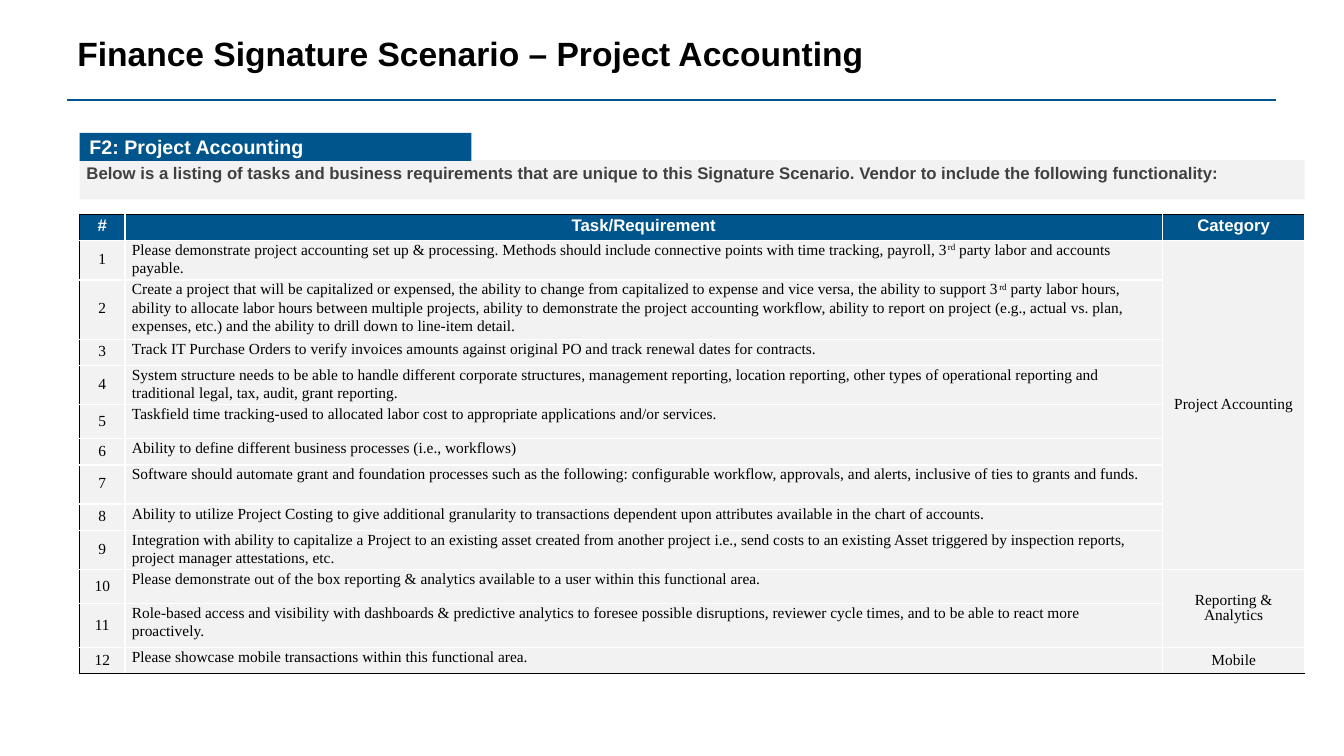
import pptx
import pptx.util
import pptx.dml.color
import pptx.enum.shapes
import pptx.enum.text
import pptx.oxml
import pptx.oxml.ns
from lxml import etree

Pt = pptx.util.Pt
ALIGN = pptx.enum.text.PP_ALIGN
ANCHOR = pptx.enum.text.MSO_ANCHOR
BLUE, GREY, WHITE, BLACK = "00558C", "F2F2F2", "FFFFFF", "000000"

HEADINGS = ["#", "Task/Requirement", "Category"]
COL_WIDTHS = [32.4, 741.6, 101.5]
HEADER_HEIGHT = 18.3
# Row height and requirement; ^ marks the ends of superscript text
REQUIREMENTS = [
    (28, "Please demonstrate project accounting set up & processing. Methods should include connective points "
         "with time tracking, payroll, 3^rd^ party labor and accounts payable."),
    (41.8, "Create a project that will be capitalized or expensed, the ability to change from capitalized to "
           "expense and vice versa, the ability to support 3^rd^ party labor hours, ability to allocate labor "
           "hours between multiple projects, ability to demonstrate the project accounting workflow, ability to "
           "report on project (e.g., actual vs. plan, expenses, etc.) and the ability to drill down to "
           "line-item detail."),
    (18.6, "Track IT Purchase Orders to verify invoices amounts against original PO and track renewal dates "
           "for contracts."),
    (28, "System structure needs to be able to handle different corporate structures, management reporting, "
         "location reporting, other types of operational reporting and traditional legal, tax, audit, "
         "grant reporting."),
    (24.3, "Taskfield time tracking-used to allocated labor cost to appropriate applications and/or services."),
    (18.6, "Ability to define different business processes (i.e., workflows)"),
    (28, "Software should automate grant and foundation processes such as the following: configurable "
         "workflow, approvals, and alerts, inclusive of ties to grants and funds."),
    (18.6, "Ability to utilize Project Costing to give additional granularity to transactions dependent upon "
           "attributes available in the chart of accounts."),
    (28, "Integration with ability to capitalize a Project to an existing asset created from another project "
         "i.e., send costs to an existing Asset triggered by inspection reports, project manager "
         "attestations, etc."),
    (24.3, "Please demonstrate out of the box reporting & analytics available to a user within this "
           "functional area."),
    (31.5, "Role-based access and visibility with dashboards & predictive analytics to foresee possible "
           "disruptions, reviewer cycle times, and to be able to react more proactively."),
    (18.6, "Please showcase mobile transactions within this functional area."),
]
# First row, last row, category
CATEGORIES = [(1, 9, "Project Accounting"), (10, 11, "Reporting & Analytics"), (12, 12, "Mobile")]

HEADER = dict(size=12, name="Arial", color=WHITE, bold=True)
BODY = dict(size=11, name="Times New Roman", color=BLACK, bold=False)
CENTRED = dict(alignment=ALIGN.CENTER, line_spacing=Pt(11))
CENTRED_BODY = dict(CENTRED, space_after=Pt(1.65))
REQUIREMENT = dict(alignment=ALIGN.LEFT, line_spacing=1.07)


def rgb(color):
    return pptx.dml.color.RGBColor.from_string(color)


def write(tf, text, font, layout):
    tf.word_wrap = True
    p = tf.paragraphs[0]
    for key, value in layout.items():
        setattr(p, key, value)
    for i, part in enumerate(text.split("^")):
        r = p.add_run()
        r.text = part
        r.font.size = Pt(font["size"])
        r.font.color.rgb = rgb(font["color"])
        for key in ("name", "bold"):
            setattr(r.font, key, font[key])
        if i % 2:
            r.font._element.set("baseline", "30000")


def add_text(s, box, text, font, **layout):
    tf = s.shapes.add_textbox(*map(Pt, box)).text_frame
    write(tf, text, font, layout)


def add_block(s, box, color):
    sp = s.shapes.add_shape(pptx.enum.shapes.MSO_SHAPE.RECTANGLE, *map(Pt, box))
    sp.shadow.inherit = False
    sp.fill.solid()
    sp.fill.fore_color.rgb = rgb(color)
    sp.line.fill.background()
    return sp


def add_title(s, x, y, w, h):
    """Place the title and the rule just below it."""
    add_text(s, (x, y, w, h), "Finance Signature Scenario – Project Accounting",
             dict(size=24, name="Arial", color=BLACK, bold=True), line_spacing=0.9)
    rule_y = Pt(y + h + 1.4)
    rule = s.shapes.add_connector(pptx.enum.shapes.MSO_CONNECTOR.STRAIGHT,
                                  Pt(x), rule_y, Pt(x + w), rule_y)
    rule.line.color.rgb = rgb(BLUE)
    rule.line.width = Pt(1.5)
    etree.SubElement(rule._element.spPr, pptx.oxml.ns.qn("a:effectLst"))


def add_scenario_banner(s, x, y, w, h):
    """Place the blue tab above the grey strip with its introduction."""
    tab_h = 20
    add_block(s, (x, y + tab_h - 0.5, w, h - tab_h), GREY)
    tab = add_block(s, (x, y, 280, tab_h), BLUE)
    tab.text_frame.vertical_anchor = ANCHOR.MIDDLE
    write(tab.text_frame, "F2: Project Accounting",
          dict(size=14, name="Arial", color=WHITE, bold=True), dict(alignment=ALIGN.LEFT))
    add_text(s, (x - 2.2, y + tab_h - 2, w, 21.8),
             "Below is a listing of tasks and business requirements that are unique to this Signature "
             "Scenario. Vendor to include the following functionality:",
             dict(size=12, name="Arial", color="404040", bold=True))


def set_borders(cell, **colors):
    tc_pr = cell._tc.get_or_add_tcPr()
    for i, (side, color) in enumerate(colors.items()):
        ln = pptx.oxml.parse_xml(
            f'<a:ln{side} {pptx.oxml.ns.nsdecls("a")} w="12700"><a:solidFill>'
            f'<a:srgbClr val="{color}"/></a:solidFill></a:ln{side}>')
        tc_pr.insert(i, ln)


def fill_cell(cell, text, font, layout, margins=(3.6, 3.6), anchor=ANCHOR.MIDDLE):
    cell.margin_left = cell.margin_right = Pt(margins[0])
    cell.margin_top = cell.margin_bottom = Pt(margins[1])
    cell.vertical_anchor = anchor
    write(cell.text_frame, text, font, layout)


def add_requirements(s, x, y):
    heights = [HEADER_HEIGHT] + [height for height, _ in REQUIREMENTS]
    last = len(heights) - 1
    table = s.shapes.add_table(len(heights), len(COL_WIDTHS), Pt(x), Pt(y),
                               Pt(sum(COL_WIDTHS)), Pt(sum(heights))).table
    for col, width in zip(table.columns, COL_WIDTHS):
        col.width = Pt(width)
    for i, height in enumerate(heights):
        table.rows[i].height = Pt(height)
        for j in range(len(COL_WIDTHS)):
            cell = table.cell(i, j)
            cell.fill.solid()
            cell.fill.fore_color.rgb = rgb(GREY if i else BLUE)
            set_borders(cell, L=WHITE if j else BLACK, R=WHITE,
                        T=WHITE if i else BLACK, B=BLACK if i == last else WHITE)

    for j, heading in enumerate(HEADINGS):
        fill_cell(table.cell(0, j), heading, HEADER, CENTRED)
    for i, (_, text) in enumerate(REQUIREMENTS, 1):
        fill_cell(table.cell(i, 0), str(i), BODY, CENTRED_BODY)
        fill_cell(table.cell(i, 1), text, BODY, REQUIREMENT, (5, 0), ANCHOR.TOP)
    for start, end, category in CATEGORIES:
        cell = table.cell(start, 2)
        if end > start:
            cell.merge(table.cell(end, 2))
        fill_cell(cell, category, BODY, CENTRED_BODY)


def main():
    prs = pptx.Presentation()
    prs.slide_width, prs.slide_height = Pt(960.48), Pt(540)
    s = prs.slides.add_slide(prs.slide_layouts[6])
    add_title(s, 48.2, 23, 864, 46.8)
    add_scenario_banner(s, 56.9, 95, 875.5, 48)
    add_requirements(s, 56.9, 153.4)
    prs.save("out.pptx")


if __name__ == "__main__":
    main()
